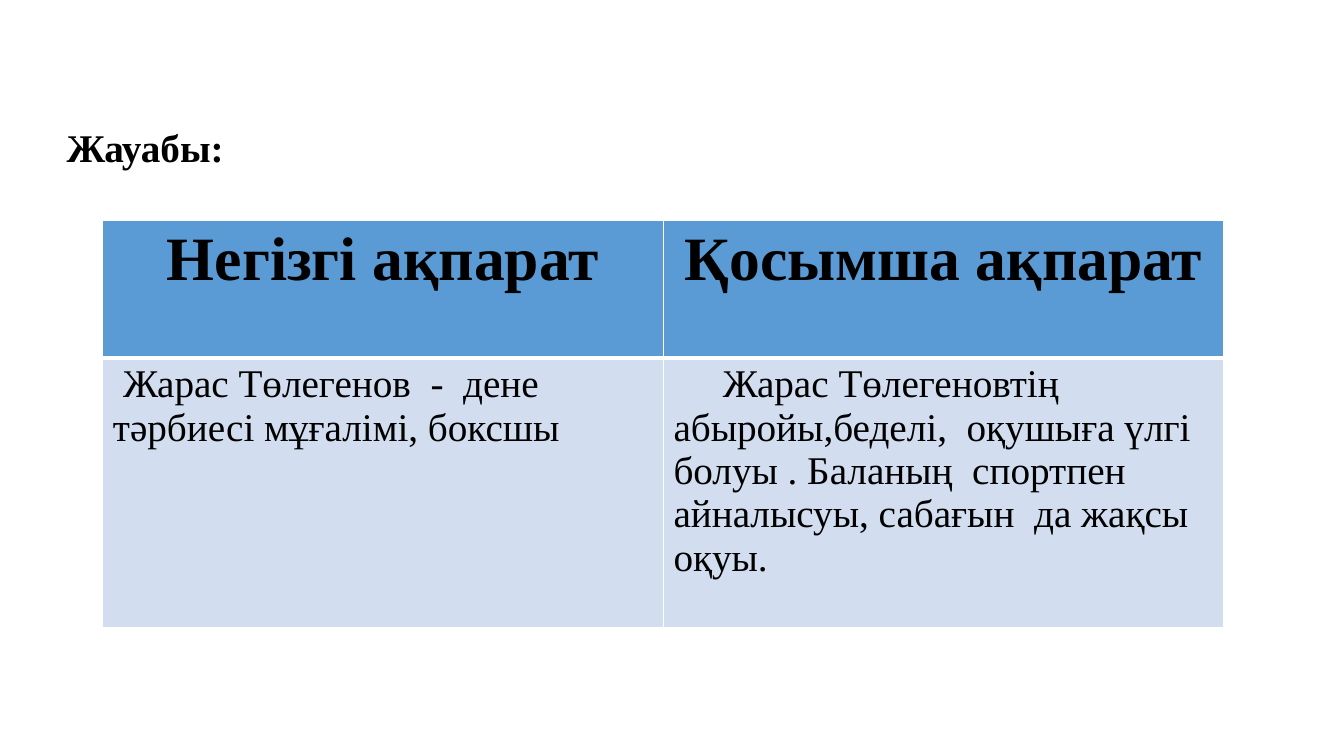
from lxml import etree
from pptx import Presentation
from pptx.dml.color import RGBColor
from pptx.enum.text import MSO_AUTO_SIZE, PP_ALIGN
from pptx.oxml.ns import qn
from pptx.util import Inches, Pt

NO_AUTOFIT = MSO_AUTO_SIZE.NONE
CENTER, LEFT = PP_ALIGN.CENTER, PP_ALIGN.LEFT
COLORS = {"text": "000000", "header": "5B9BD5", "body": "D2DEEF", "border": "FFFFFF"}
FONT = "Times New Roman"


def style_font(para, size, bold):
    para.font.name = FONT
    para.font.size = Pt(size)
    para.font.bold = bold
    para.font.color.rgb = RGBColor.from_string(COLORS["text"])


def add_borders(cell, widths):
    """Draw cell borders; widths maps an edge (L, R, T, B) to points."""
    properties = cell._tc.get_or_add_tcPr()
    for position, (edge, width) in enumerate(widths.items()):
        line = etree.Element(qn(f"a:ln{edge}"), w=str(Pt(width)))
        fill = etree.SubElement(line, qn("a:solidFill"))
        etree.SubElement(fill, qn("a:srgbClr"), val=COLORS["border"])
        properties.insert(position, line)


deck = Presentation()
deck.slide_width, deck.slide_height = Inches(13.33), Inches(7.5)
page = deck.slides.add_slide(deck.slide_layouts[1])
title = page.shapes.title
title.element.getparent().remove(title.element)

# Answer label
answer = page.placeholders[1]
answer.left, answer.top = Inches(0.56), Inches(0.63)
answer.width, answer.height = Inches(11.57), Inches(4.6)
frame = answer.text_frame
frame.auto_size = NO_AUTOFIT
frame.margin_top = Inches(0.65)
para = frame.paragraphs[0]
para.text = "Жауабы:"
para.line_spacing = 0.9
para.space_before = Pt(0)
style_font(para, 28, True)
para_properties = para._p.get_or_add_pPr()
para_properties.set("marL", "0")
para_properties.set("indent", "0")
para_properties.insert_element_before(
    etree.Element(qn("a:buNone")), "a:tabLst", "a:defRPr", "a:extLst")

# Information table: text and first-line indent of each cell
rows = [
    [("Негізгі ақпарат", 0), ("Қосымша ақпарат", 0)],
    [("Жарас Төлегенов  -  дене тәрбиесі мұғалімі, боксшы", 0.1),
     ("Жарас Төлегеновтің абыройы,беделі,  оқушыға үлгі болуы . "
      "Баланың  спортпен айналысуы, сабағын  да жақсы оқуы.", 0.49)],
]
row_styles = [
    {"height": 1.36, "fill": "header", "size": 44, "align": CENTER,
     "borders": {"L": 1, "R": 1, "T": 1, "B": 3}},
    {"height": 2.68, "fill": "body", "size": 28, "align": LEFT,
     "borders": {"L": 1, "R": 1, "T": 3, "B": 1}},
]
table = page.shapes.add_table(
    2, 2, Inches(1.02), Inches(2.19), Inches(11.12), Inches(4.04)).table
for column in table.columns:
    column.width = Inches(5.56)
for row, texts, style in zip(table.rows, rows, row_styles):
    row.height = Inches(style["height"])
    for cell, (text, indent) in zip(row.cells, texts):
        cell.fill.solid()
        cell.fill.fore_color.rgb = RGBColor.from_string(COLORS[style["fill"]])
        add_borders(cell, style["borders"])
        para = cell.text_frame.paragraphs[0]
        para.text = text
        para.alignment = style["align"]
        para._p.get_or_add_pPr().set("indent", str(Inches(indent)))
        style_font(para, style["size"], style["fill"] == "header")

deck.save("out.pptx")
